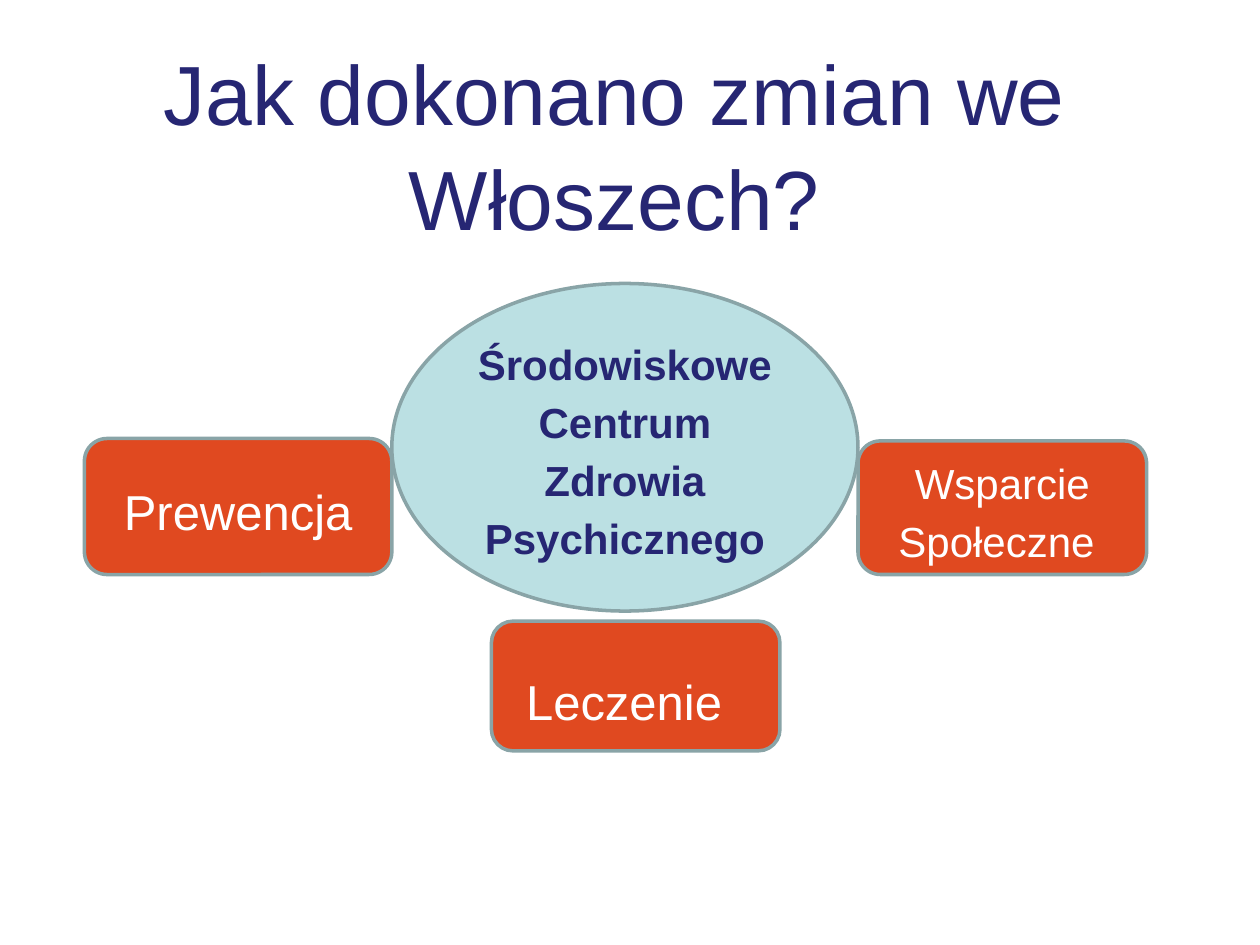
from dataclasses import dataclass

from pptx import Presentation
from pptx.dml.color import RGBColor
from pptx.enum.shapes import MSO_SHAPE
from pptx.enum.text import MSO_ANCHOR, PP_ALIGN
from pptx.util import Inches, Pt


@dataclass(frozen=True)
class Theme:
    """Colours, fonts and type sizes of the slide."""
    navy: str = "262673"
    aqua: str = "BBE0E3"
    orange: str = "E04920"
    outline: str = "89A4A7"
    white: str = "FFFFFF"
    font: str = "Arial"
    spacer_font: str = "Comic Neue"
    title: int = 48
    spacer: int = 40
    large: int = 28
    body: int = 24
    line: int = 2


THEME = Theme()


def apply(target, values):
    """Set every attribute in values on target."""
    for name, value in values.items():
        setattr(target, name, value)


def add_run(paragraph, wording, color, size, font=THEME.font, bold=False):
    """Append a formatted run to a paragraph."""
    run = paragraph.add_run()
    run.text = wording
    apply(run.font, {"name": font, "size": Pt(size), "bold": bold})
    run.font.color.rgb = RGBColor.from_string(color)


def center_text(holder, spacing):
    """Prepare a wrapped, centred text frame and return its paragraph."""
    frame = holder.text_frame
    apply(frame, {"word_wrap": True, "vertical_anchor": MSO_ANCHOR.MIDDLE})
    paragraph = frame.paragraphs[0]
    apply(paragraph, {"alignment": PP_ALIGN.CENTER, "line_spacing": spacing})
    return paragraph


def add_title(slide, wording, bounds):
    """Add the slide heading."""
    heading = slide.shapes.add_textbox(*map(Inches, bounds))
    add_run(center_text(heading, 1.04), wording, THEME.navy, THEME.title)


def add_node(slide, kind, bounds, fill, wording, color, size, bold=False):
    """Add an outlined diagram node and return its paragraph."""
    node = slide.shapes.add_shape(kind, *map(Inches, bounds))
    node.shadow.inherit = False
    node.fill.solid()
    node.fill.fore_color.rgb = RGBColor.from_string(fill)
    node.line.color.rgb = RGBColor.from_string(THEME.outline)
    node.line.width = Pt(THEME.line)
    paragraph = center_text(node, 1.15)
    add_run(paragraph, wording, color, size, bold=bold)
    return paragraph


def add_service(slide, bounds, wording, size):
    """Add an orange service box and return its paragraph."""
    return add_node(slide, MSO_SHAPE.ROUNDED_RECTANGLE, bounds,
                    THEME.orange, wording, THEME.white, size)


def main():
    """Build and save the slide."""
    deck = Presentation()
    apply(deck, {"slide_width": Inches(10), "slide_height": Inches(7.5)})
    slide = deck.slides.add_slide(deck.slide_layouts[6])
    add_title(slide, "Jak dokonano zmian we Włoszech?", (0.75, 0.33, 8.25, 1.6))
    add_node(slide, MSO_SHAPE.OVAL, (3.11, 2.25, 3.7, 2.6), THEME.aqua,
             "Środowiskowe Centrum Zdrowia Psychicznego",
             THEME.navy, THEME.body, bold=True)
    add_service(slide, (6.81, 3.5, 2.29, 1.06), "Wsparcie Społeczne ", THEME.body)
    add_service(slide, (0.67, 3.48, 2.44, 1.08), "Prewencja", THEME.large)
    treatment = add_service(slide, (3.9, 4.93, 2.29, 1.03), "Leczenie", THEME.large)
    add_run(treatment, " ", THEME.white, THEME.spacer, THEME.spacer_font)
    deck.save("out.pptx")


if __name__ == "__main__":
    main()
